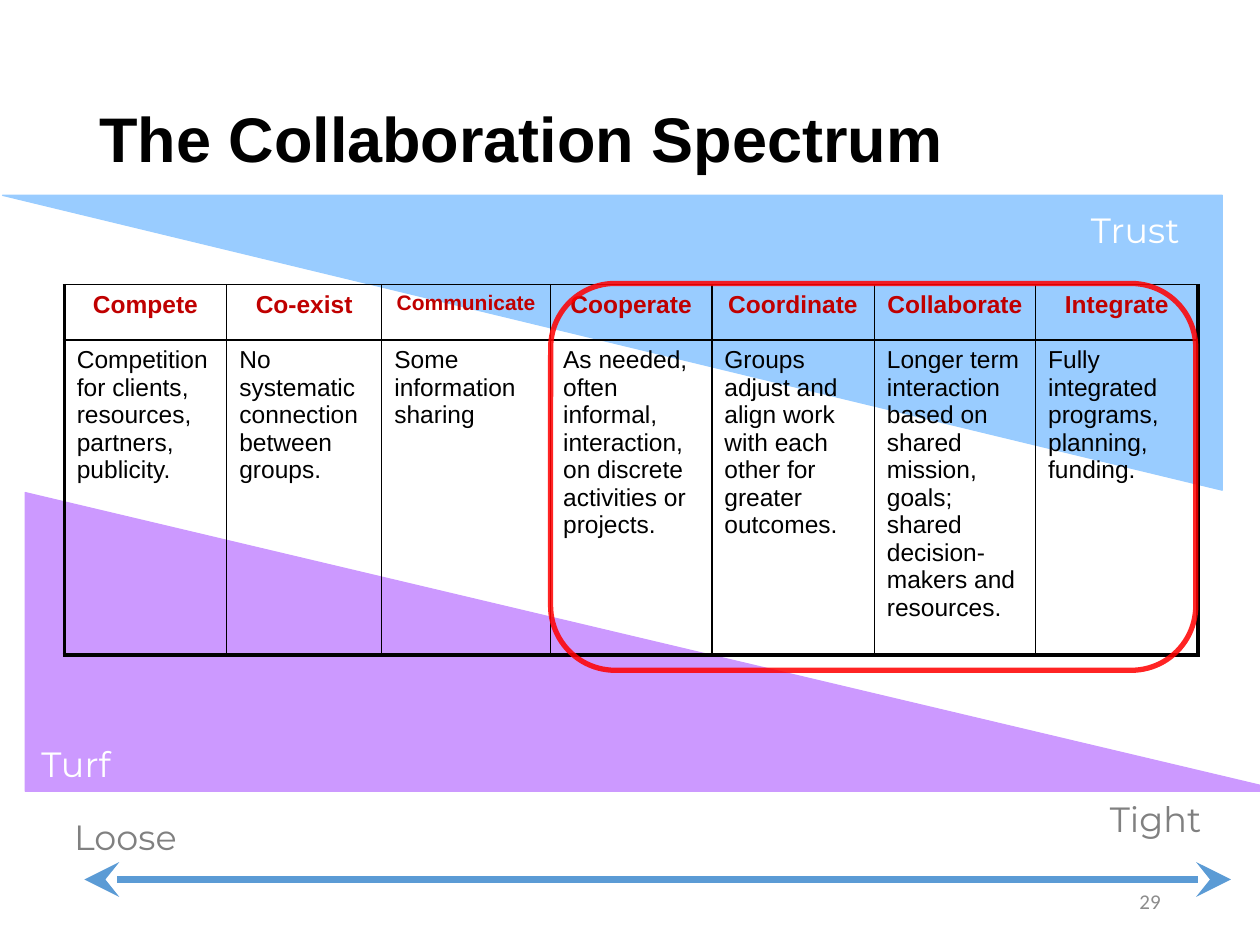
from dataclasses import dataclass
from itertools import product
from lxml.etree import SubElement
from pptx import Presentation
from pptx.dml.color import RGBColor as Color
from pptx.enum.shapes import MSO_CONNECTOR as Connector, MSO_SHAPE as Shape
from pptx.enum.text import MSO_ANCHOR as Anchor, PP_ALIGN as Align
from pptx.oxml.ns import qn
from pptx.util import Inches, Pt


@dataclass(frozen=True)
class Theme:
    black: str = "000000"
    white: str = "FFFFFF"
    gray: str = "808080"
    number_gray: str = "8C8C8C"
    trust: str = "99CCFF"
    turf: str = "CC99FF"
    heading: str = "C00000"
    arrow: str = "5B9BD5"
    highlight: str = "FF0000"
    body_font: str = "Arial"
    label_font: str = "Montserrat"
    number_font: str = "Calibri"
    title_size: int = 36
    label_size: int = 20
    cell_size: int = 14
    small_size: int = 12
    thin: float = 1
    thick: float = 2.25


theme = Theme()
deck = Presentation()
deck.slide_width, deck.slide_height = Inches(10), Inches(7.5)
page = deck.slides.add_slide(deck.slide_layouts[6])
unit = deck.slide_width // 100


def grid(*steps):
    return [round(step * unit) for step in steps]


def write(frame, text, font, size, color, bold=False, align=Align.LEFT):
    frame.text = text
    para = frame.paragraphs[0]
    para.alignment = align
    span = para.runs[0]
    span.font.name = font
    span.font.size = Pt(size)
    span.font.bold = bold
    span.font.color.rgb = Color.from_string(color)


wedges = [
    ((0.2, 15.5, 96.8, 23.4), 180, theme.trust),
    ((2, 39.1, 100, 23.7), 0, theme.turf),
]
for area, turn, color in wedges:
    wedge = page.shapes.add_shape(Shape.RIGHT_TRIANGLE, *grid(*area))
    wedge.rotation = turn
    wedge.shadow.inherit = False
    wedge.fill.solid()
    wedge.fill.fore_color.rgb = Color.from_string(color)
    wedge.line.color.rgb = Color.from_string(color)
    wedge.line.width = Pt(0.75)

labels = [
    ("Trust", (85.6, 16.9, 10.5, 2.6), theme.white, None),
    ("Turf", (2.3, 59.3, 8.4, 2.6), theme.white, None),
    ("Loose", (4.9, 64.5, 11.6, 3.7), theme.gray, theme.white),
    ("Tight", (87.1, 63.1, 11.6, 3.7), theme.gray, theme.white),
]
for text, area, color, backing in labels:
    box = page.shapes.add_textbox(*grid(*area))
    if backing:
        box.fill.solid()
        box.fill.fore_color.rgb = Color.from_string(backing)
    box.text_frame.word_wrap = False
    box.text_frame.vertical_anchor = Anchor.MIDDLE
    write(box.text_frame, text, theme.label_font, theme.label_size, color)

stages = [
    ("Compete", 12.9, "Competition for clients, resources, partners, publicity."),
    ("Co-exist", 12.3, "No systematic connection between groups."),
    ("Communicate", 13.4, "Some information sharing"),
    ("Cooperate", 12.8, "As needed, often informal, interaction, on discrete activities or projects."),
    ("Coordinate", 12.9, "Groups adjust and align work with each other for greater outcomes."),
    ("Collaborate", 12.8, "Longer term interaction based on shared mission, goals; shared decision-makers and resources."),
    ("Integrate", 12.9, "Fully integrated programs, planning, funding."),
]
last = len(stages) - 1
table = page.shapes.add_table(2, len(stages), *grid(5.1, 22.6, 90, 29.4)).table
table.first_row = table.horz_banding = False
for row, height in zip(table.rows, grid(4.4, 25)):
    row.height = height
for column, (_, width, _) in zip(table.columns, stages):
    column.width = grid(width)[0]

for row, column in product(range(2), range(len(stages))):
    heading, _, detail = stages[column]
    cell = table.cell(row, column)
    if row == 0:
        size = theme.small_size if heading == "Communicate" else theme.cell_size
        write(cell.text_frame, heading, theme.body_font, size, theme.heading, True, Align.CENTER)
    else:
        write(cell.text_frame, detail, theme.body_font, theme.cell_size, theme.black)
    outer = {"lnL": column == 0, "lnR": column == last, "lnT": False, "lnB": row == 1}
    properties = cell._tc.get_or_add_tcPr()
    for side, is_outer in outer.items():
        weight = theme.thick if is_outer else theme.thin
        border = SubElement(properties, qn(f"a:{side}"), w=str(Pt(weight)))
        paint = SubElement(border, qn("a:solidFill"))
        SubElement(paint, qn("a:srgbClr"), val=theme.black)
    cell.fill.background()

title = page.shapes.add_textbox(*grid(6.9, 4, 86.2, 14.5))
title.text_frame.word_wrap = True
title.text_frame.vertical_anchor = Anchor.MIDDLE
write(title.text_frame, "The Collaboration Spectrum", theme.body_font, theme.title_size, theme.black, True)
title.text_frame.paragraphs[0].line_spacing = 0.9

number = page.shapes.add_textbox(*grid(70.6, 69.5, 22.5, 4))
number.text_frame.word_wrap = True
number.text_frame.vertical_anchor = Anchor.MIDDLE
write(number.text_frame, "29", theme.number_font, theme.small_size, theme.number_gray, align=Align.RIGHT)

arrow = page.shapes.add_connector(Connector.STRAIGHT, *grid(6.7, 69.8, 97.7, 69.8))
arrow.line.color.rgb = Color.from_string(theme.arrow)
arrow.line.width = Pt(4)
for end in ("headEnd", "tailEnd"):
    SubElement(arrow.line._get_or_add_ln(), qn(f"a:{end}"), type="stealth", w="lg", len="lg")
SubElement(arrow._element.spPr, qn("a:effectLst"))

highlight = page.shapes.add_shape(Shape.ROUNDED_RECTANGLE, *grid(43.7, 22.5, 51.2, 30.7))
highlight.shadow.inherit = False
highlight.fill.background()
highlight.line.color.rgb = Color.from_string(theme.highlight)
highlight.line.width = Pt(3)
tint = highlight._element.spPr.find(f"{qn('a:ln')}/{qn('a:solidFill')}/{qn('a:srgbClr')}")
SubElement(tint, qn("a:alpha"), val="85000")

deck.save("out.pptx")
